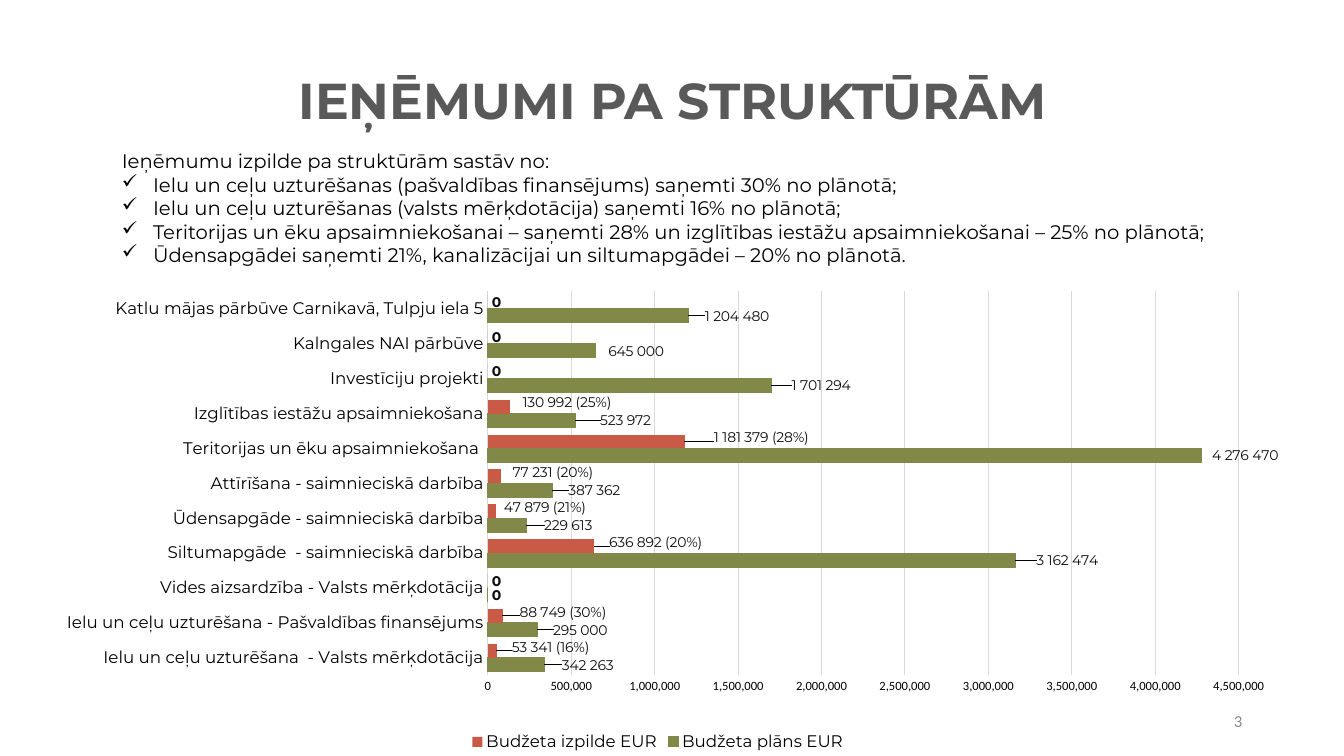
from lxml import etree
from pptx import Presentation
from pptx.chart.data import CategoryChartData as ChartData
from pptx.dml.color import RGBColor
from pptx.enum.chart import XL_CHART_TYPE as Kind, XL_LABEL_POSITION as Spot
from pptx.enum.chart import XL_LEGEND_POSITION as Side, XL_TICK_MARK as Tick
from pptx.enum.text import MSO_ANCHOR as Anchor, PP_ALIGN as Align
from pptx.oxml.ns import qn
from pptx.util import Inches, Pt

BLACK = RGBColor(0x00, 0x00, 0x00)
DARK = RGBColor(0x0D, 0x0D, 0x0D)
SLATE = RGBColor(0x59, 0x59, 0x59)
GRAY = RGBColor(0x8C, 0x8C, 0x8C)
PALE = RGBColor(0xD9, 0xD9, 0xD9)
GREEN = RGBColor(0x82, 0x88, 0x47)
RED = RGBColor(0xC9, 0x5B, 0x46)
MAIN, PLAIN = "Montserrat", "Calibri"
WIDE, HIGH = 12.26, 4.79  # chart size in inches

INTRO = "Ieņēmumu izpilde pa struktūrām sastāv no: "
POINTS = [
    "Ielu un ceļu uzturēšanas (pašvaldības finansējums) saņemti 30% no plānotā; ",
    "Ielu un ceļu uzturēšanas (valsts mērķdotācija) saņemti 16% no plānotā;",
    "Teritorijas un ēku apsaimniekošanai – saņemti 28% un izglītības iestāžu "
    "apsaimniekošanai – 25% no plānotā;",
    "Ūdensapgādei saņemti 21%, kanalizācijai un siltumapgādei – 20% no plānotā.",
]

# Category, plan, plan label shift, income, share in %, income label shift (inches)
ROWS = [
    ("Ielu un ceļu uzturēšana  - Valsts mērķdotācija", 342263, 0.13, 53341, 16, 0.11),
    ("Ielu un ceļu uzturēšana - Pašvaldības finansējums", 295000, 0.12, 88749, 30, 0.13),
    ("Vides aizsardzība - Valsts mērķdotācija", 0, 0, 0, 0, 0),
    ("Siltumapgāde  - saimnieciskā darbība", 3162474, 0.17, 636892, 20, 0.11),
    ("Ūdensapgāde - saimnieciskā darbība", 229613, 0.14, 47879, 21, 0.04),
    ("Attīrīšana - saimnieciskā darbība", 387362, 0.12, 77231, 20, 0.08),
    ("Teritorijas un ēku apsaimniekošana ", 4276470, 0.07, 1181379, 28, 0.25),
    ("Izglītības iestāžu apsaimniekošana", 523972, 0.21, 130992, 25, 0.09),
    ("Investīciju projekti", 1701294, 0.16, 0, 0, 0),
    ("Kalngales NAI pārbūve", 645000, 0.09, 0, 0, 0),
    ("Katlu mājas pārbūve Carnikavā, Tulpju iela 5", 1204480, 0.12, 0, 0, 0),
]


def style(font, size, name=MAIN, color=BLACK, bold=False):
    font.size, font.name, font.bold = Pt(size), name, bold
    font.color.rgb = color


def add_text(slide, box, lines, align, anchor=Anchor.TOP, **look):
    frame = slide.shapes.add_textbox(*map(Inches, box)).text_frame
    frame.word_wrap, frame.vertical_anchor = True, anchor
    frame.text = "\n".join(lines)
    for par in frame.paragraphs:
        par.alignment = align
        style(par.font, **look)
    return frame.paragraphs


def add_check(par):
    props = par._p.get_or_add_pPr()
    props.set("marL", str(Inches(0.31)))
    props.set("indent", str(-Inches(0.31)))
    mark = etree.Element(qn("a:buChar"), char="✓")
    # The bullet comes before the default run properties
    props.find(qn("a:defRPr")).addprevious(mark)


def make_layout(**parts):
    layout = etree.Element(qn("c:layout"))
    manual = etree.SubElement(layout, qn("c:manualLayout"))
    for tag, val in parts.items():
        etree.SubElement(manual, qn("c:" + tag), val=str(val))
    return layout


def tag_point(series, index, text, shift, rise):
    label = series.points[index].data_label
    label.position = Spot.OUTSIDE_END
    par = label.text_frame.paragraphs[0]
    run = par.add_run()
    run.text = text
    style(run.font, 10, color=DARK)
    node = series._element.xpath(f"c:dLbls/c:dLbl/c:idx[@val='{index}']")[0]
    node.addnext(make_layout(x=round(shift / WIDE, 4), y=round(rise / HIGH, 4)))


def style_series(series, color, tags, rise):
    series.format.fill.solid()
    series.format.fill.fore_color.rgb = color
    series.invert_if_negative = False
    labels = series.data_labels
    labels.show_value = True
    labels.position = Spot.OUTSIDE_END
    labels.number_format, labels.number_format_is_linked = "#,##0", False
    style(labels.font, 10, color=DARK, bold=True)
    for index, (text, shift) in enumerate(tags):
        if text:
            tag_point(series, index, text, shift, rise)


def style_axis(axis, size, name):
    axis.major_tick_mark = axis.minor_tick_mark = Tick.NONE
    axis.format.line.fill.background()
    style(axis.tick_labels.font, size, name)


def spaced(num):
    return f"{num:,}".replace(",", " ")


def add_bars(slide):
    names, plan, plan_dx, income, share, income_dx = zip(*ROWS)
    data = ChartData(number_format="#,##0")
    data.categories = names
    data.add_series("Budžeta plāns EUR", plan)
    data.add_series("Budžeta izpilde EUR", income)
    chart = slide.shapes.add_chart(Kind.BAR_CLUSTERED, Inches(0.42), Inches(2.71),
                                   Inches(WIDE), Inches(HIGH), data).chart
    chart.has_title = False
    style(chart.font, 10, PLAIN)

    # Plot area
    area = chart._chartSpace.chart.plotArea
    for old in area.findall(qn("c:layout")):
        area.remove(old)
    area.insert(0, make_layout(layoutTarget="inner", xMode="edge", yMode="edge",
                               x=0.362, y=0.038, w=0.61, h=0.795))

    # Axes and grid
    style_axis(chart.category_axis, 12, MAIN)
    axis = chart.value_axis
    style_axis(axis, 9, PLAIN)
    axis.minimum_scale, axis.maximum_scale, axis.major_unit = 0, 4500000, 500000
    axis.tick_labels.number_format = "#,##0"
    axis.tick_labels.number_format_is_linked = False
    axis.has_major_gridlines = True
    grid = axis.major_gridlines.format.line
    grid.color.rgb, grid.width = PALE, Pt(0.75)

    # Bars and their labels
    plot = chart.plots[0]
    plot.gap_width, plot.overlap, plot.vary_by_categories = 50, 0, False
    plan_tags = [(spaced(n) if n else "", dx) for n, dx in zip(plan, plan_dx)]
    income_tags = [(f"{spaced(n)} ({pct}%)" if n else "", dx)
                   for n, pct, dx in zip(income, share, income_dx)]
    style_series(plot.series[0], GREEN, plan_tags, 0)
    style_series(plot.series[1], RED, income_tags, -0.04)
    edge = plot.series[0].format.line
    edge.color.rgb, edge.width = GREEN, Pt(0.75)

    # Legend
    chart.has_legend = True
    chart.legend.position = Side.BOTTOM
    chart.legend.include_in_layout = False
    style(chart.legend.font, 12)


def main():
    deck = Presentation()
    deck.slide_width, deck.slide_height = Inches(13.33), Inches(7.5)
    slide = deck.slides.add_slide(deck.slide_layouts[6])

    # Title and page number
    title = add_text(slide, (0.92, 0.3, 11.5, 1.45), ["IEŅĒMUMI PA STRUKTŪRĀM"],
                     Align.CENTER, Anchor.MIDDLE, size=36, color=SLATE, bold=True)
    title[0].line_spacing = 0.9
    add_text(slide, (9.42, 6.95, 3, 0.4), ["3"], Align.RIGHT, Anchor.MIDDLE,
             size=12, name=PLAIN, color=GRAY)

    add_bars(slide)

    # Summary with check marks
    pars = add_text(slide, (1.11, 1.43, 11.5, 1.28), [INTRO, *POINTS],
                    Align.JUSTIFY, size=14)
    for par in pars[1:]:
        add_check(par)

    deck.save("out.pptx")


if __name__ == "__main__":
    main()
